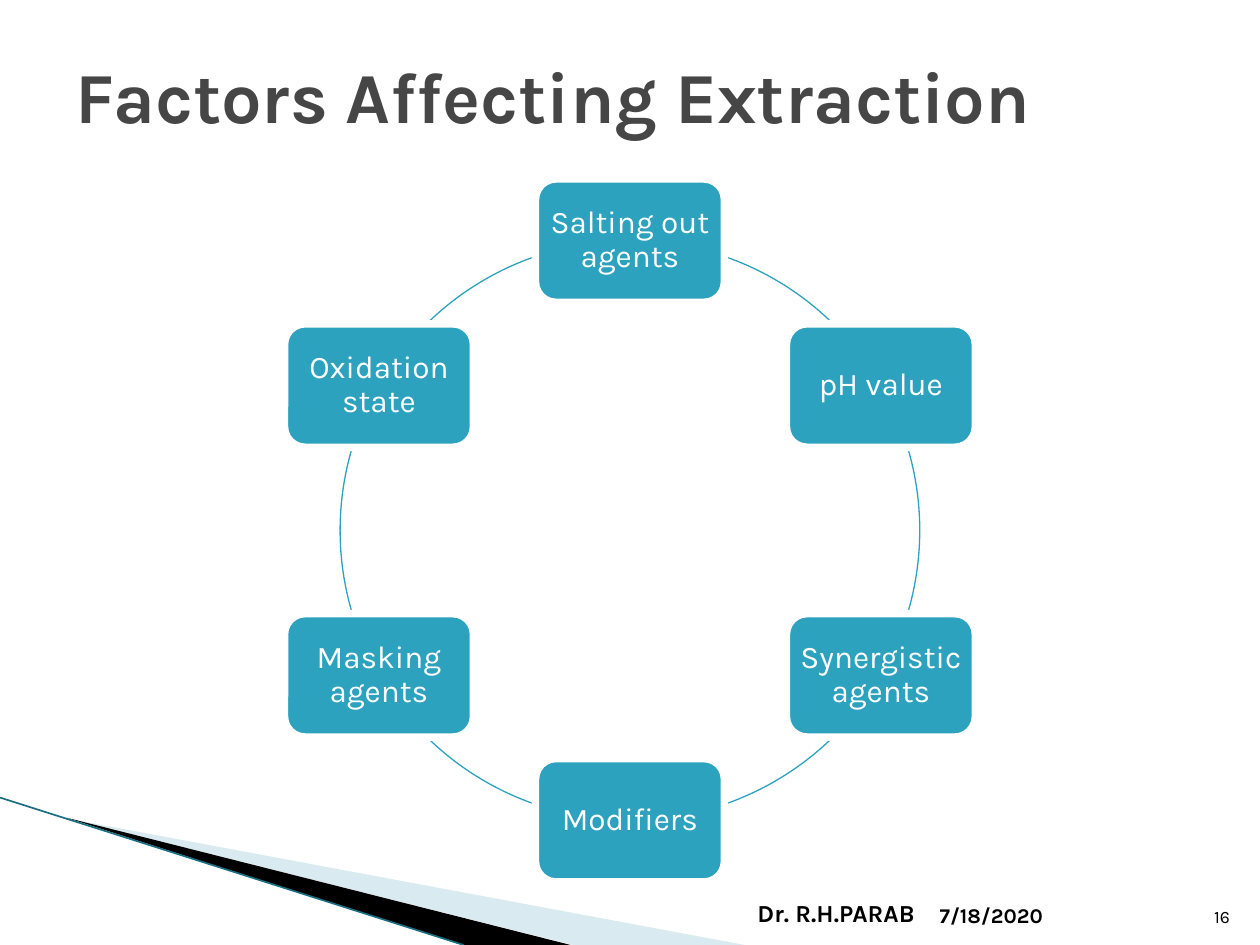
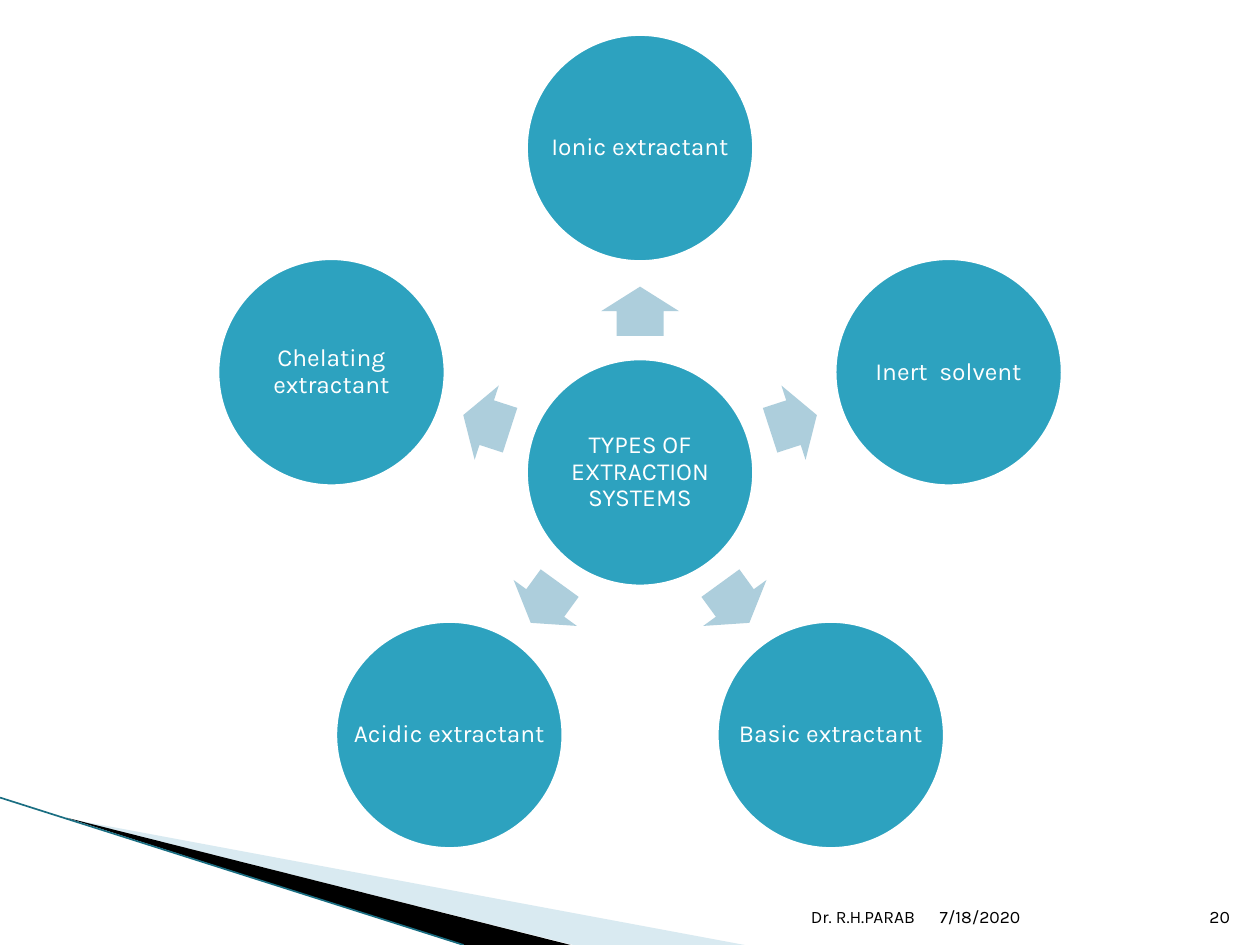
import math
from typing import NamedTuple

from lxml import etree
from pptx import Presentation
from pptx.dml.color import RGBColor
from pptx.enum.shapes import MSO_CONNECTOR, MSO_SHAPE
from pptx.enum.text import MSO_ANCHOR, MSO_AUTO_SIZE, PP_ALIGN
from pptx.oxml.ns import qn
from pptx.util import Emu, Inches, Pt

ROUNDED, CIRCLE = MSO_SHAPE.ROUNDED_RECTANGLE, MSO_SHAPE.OVAL
ARC, ARROW = MSO_SHAPE.ARC, MSO_SHAPE.RIGHT_ARROW
STRAIGHT = MSO_CONNECTOR.STRAIGHT
LEFT, CENTER, RIGHT = PP_ALIGN.LEFT, PP_ALIGN.CENTER, PP_ALIGN.RIGHT
MIDDLE, BOTTOM = MSO_ANCHOR.MIDDLE, MSO_ANCHOR.BOTTOM

FONT = "Karla"
COLORS = {
    "teal": "2DA2BF",
    "arrow": "ADCEDC",
    "pale": "A0CBDC",
    "edge": "1A6E82",
    "title": "464646",
    "black": "000000",
    "white": "FFFFFF",
}

# The slide is a grid of 100 columns by 75 rows of square cells.
COLUMNS, ROWS = 100, 75
CELL = Inches(0.1)
TITLE_ONLY, BLANK = 5, 6


class Area(NamedTuple):
    left: float
    top: float
    width: float
    height: float


class Point(NamedTuple):
    x: float
    y: float


class Node(NamedTuple):
    label: str
    wraps: bool = True


class NodeStyle(NamedTuple):
    shape: int
    width: float
    height: float
    size: int


class FooterPart(NamedTuple):
    text: str
    area: Area
    align: int
    size: int
    bold: bool = False


NODE_INSET = 0.2
FACTOR_STYLE = NodeStyle(ROUNDED, 15, 9.8, 18)
FACTORS = [Node(label) for label in (
    "Salting out agents", "pH value", "Synergistic agents",
    "Modifiers", "Masking agents", "Oxidation state",
)]
RING_CENTER, RING_RADIUS = Point(50, 42.1), 23
RIGHT_ARCS = [(-70.7, -45.6), (-16.4, 16.4), (45.6, 70.7)]

SYSTEM_STYLE = NodeStyle(CIRCLE, 18.4, 18.4, 14)
HUB = Node("TYPES OF EXTRACTION SYSTEMS")
SYSTEMS = [
    Node("Ionic extractant", wraps=False),
    Node("Inert  solvent"),
    Node("Basic extractant", wraps=False),
    Node("Acidic extractant", wraps=False),
    Node("Chelating extractant"),
]
HUB_CENTER, SYSTEM_RADIUS, ARROW_RADIUS = Point(50.8, 37.5), 25.75, 12.8
ARROW_WIDTH, ARROW_HEIGHT = 3.9, 6.2

AUTHOR_AREA = Area(47.9, 70.1, 25.7, 4)
DATE_AREA = Area(73.6, 70.1, 21, 4)
NUMBER_AREA = Area(94.6, 70.1, 4, 4)


def cells(count: float) -> Emu:
    return Emu(round(count * CELL))


def place(area: Area) -> list[Emu]:
    return [cells(length) for length in area]


def around(center: Point, width: float, height: float) -> Area:
    return Area(center.x - width / 2, center.y - height / 2, width, height)


def on_circle(center: Point, radius: float, degrees: float) -> Point:
    """Point at an angle measured clockwise from the right."""
    angle = math.radians(degrees)
    return Point(center.x + radius * math.cos(angle), center.y + radius * math.sin(angle))


def color(name: str) -> RGBColor:
    return RGBColor.from_string(COLORS[name])


def paint(shape, name: str) -> None:
    """Flat fill without outline or shadow."""
    shape.shadow.inherit = False
    shape.fill.solid()
    shape.fill.fore_color.rgb = color(name)
    shape.line.fill.background()


def write(shape, text: str, size: int, ink: str, align: int, anchor: int, bold: bool = False) -> None:
    frame = shape.text_frame
    frame.text = text
    frame.word_wrap = True
    frame.auto_size = MSO_AUTO_SIZE.NONE
    frame.vertical_anchor = anchor
    para = frame.paragraphs[0]
    para.alignment = align
    for span in para.runs:
        span.font.name, span.font.size, span.font.bold = FONT, Pt(size), bold
        span.font.color.rgb = color(ink)


def add_wedge(page, corners: list[Point], fill: str):
    points = [(cells(corner.x), cells(corner.y)) for corner in corners]
    builder = page.shapes.build_freeform(*points[0])
    builder.add_line_segments(points[1:], close=True)
    wedge = builder.convert_to_shape()
    paint(wedge, fill)
    return wedge


def add_corner_band(page) -> None:
    pale = add_wedge(page, [Point(5.5, 65), Point(59.1, ROWS), Point(45.5, ROWS)], "pale")
    tint = pale._element.spPr.find(qn("a:solidFill"))[0]
    etree.SubElement(tint, qn("a:alpha"), val="40000")
    add_wedge(page, [Point(5.3, 64.9), Point(45.3, ROWS), Point(36.7, ROWS)], "black")
    edge = page.shapes.add_connector(STRAIGHT, 0, cells(63.3), cells(36.8), cells(ROWS))
    edge.line.color.rgb = color("edge")
    edge.line.width = Pt(0.95)
    etree.SubElement(edge._element.spPr, qn("a:effectLst"))


def add_footer(page, parts: list[FooterPart]) -> None:
    for part in parts:
        box = page.shapes.add_textbox(*place(part.area))
        write(box, part.text, part.size, "black", part.align, BOTTOM, part.bold)


def add_page(deck, layout: int, footer: list[FooterPart]):
    page = deck.slides.add_slide(deck.slide_layouts[layout])
    add_corner_band(page)
    add_footer(page, footer)
    return page


def add_node(page, node: Node, center: Point, style: NodeStyle) -> None:
    area = around(center, style.width, style.height)
    shape = page.shapes.add_shape(style.shape, *place(area))
    paint(shape, "teal")
    shape.line.color.rgb = color("white")
    shape.line.width = Pt(4.33)
    write(shape, node.label, style.size, "white", CENTER, MIDDLE)
    frame = shape.text_frame
    frame.word_wrap = node.wraps
    frame.paragraphs[0].line_spacing = 0.9
    frame.margin_left = frame.margin_right = cells(NODE_INSET)
    frame.margin_top = frame.margin_bottom = cells(NODE_INSET)


def add_arc(page, start: float, end: float) -> None:
    area = around(RING_CENTER, 2 * RING_RADIUS, 2 * RING_RADIUS)
    arc = page.shapes.add_shape(ARC, *place(area))
    arc.shadow.inherit = False
    arc.fill.background()
    arc.line.color.rgb = color("teal")
    arc.line.width = Pt(0.75)
    # Angles are stored in 60000ths of a degree, adjustments in 100000ths.
    for index, degrees in enumerate((start, end)):
        arc.adjustments[index] = degrees % 360 * 0.6


def add_arrow(page, degrees: float) -> None:
    center = on_circle(HUB_CENTER, ARROW_RADIUS, degrees)
    arrow = page.shapes.add_shape(ARROW, *place(around(center, ARROW_WIDTH, ARROW_HEIGHT)))
    paint(arrow, "arrow")
    arrow.adjustments[0], arrow.adjustments[1] = 0.6, 0.5
    arrow.rotation = degrees % 360


def build_factors(deck) -> None:
    page = add_page(deck, TITLE_ONLY, [
        FooterPart("Dr. R.H.PARAB", AUTHOR_AREA, RIGHT, 14, bold=True),
        FooterPart("7/18/2020", DATE_AREA, LEFT, 12, bold=True),
        FooterPart("16", NUMBER_AREA, RIGHT, 10),
    ])
    title = page.shapes.title
    title.left, title.top, title.width, title.height = place(Area(5, 2.5, 90, 10))
    write(title, "Factors Affecting Extraction", 41, "title", LEFT, MIDDLE, bold=True)
    for half_turn in (0, 180):
        for start, end in RIGHT_ARCS:
            add_arc(page, start + half_turn, end + half_turn)
    for index, factor in enumerate(FACTORS):
        degrees = index * 360 / len(FACTORS) - 90
        add_node(page, factor, on_circle(RING_CENTER, RING_RADIUS, degrees), FACTOR_STYLE)


def build_systems(deck) -> None:
    page = add_page(deck, BLANK, [
        FooterPart("Dr. R.H.PARAB", AUTHOR_AREA, RIGHT, 10),
        FooterPart("7/18/2020", DATE_AREA, LEFT, 10),
        FooterPart("20", NUMBER_AREA, RIGHT, 10),
    ])
    add_node(page, HUB, HUB_CENTER, SYSTEM_STYLE)
    for index, system in enumerate(SYSTEMS):
        degrees = index * 360 / len(SYSTEMS) - 90
        add_arrow(page, degrees)
        add_node(page, system, on_circle(HUB_CENTER, SYSTEM_RADIUS, degrees), SYSTEM_STYLE)


def main() -> None:
    deck = Presentation()
    deck.slide_width, deck.slide_height = cells(COLUMNS), cells(ROWS)
    build_factors(deck)
    build_systems(deck)
    deck.save("out.pptx")


if __name__ == "__main__":
    main()
